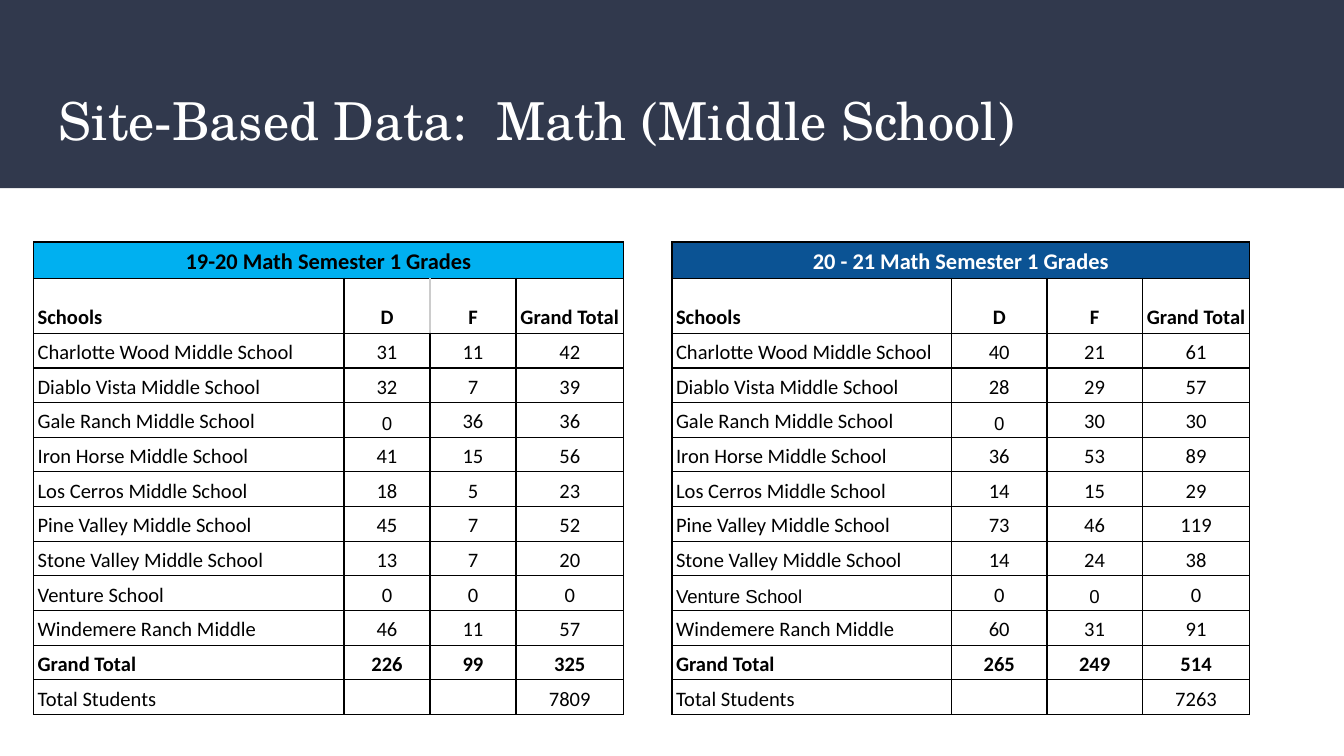
from lxml import etree
from pptx import Presentation
from pptx import util as u
from pptx.dml.color import RGBColor
from pptx.enum import shapes, text
from pptx.oxml import ns

SCHOOLS = [
    "Charlotte Wood Middle School", "Diablo Vista Middle School",
    "Gale Ranch Middle School", "Iron Horse Middle School",
    "Los Cerros Middle School", "Pine Valley Middle School",
    "Stone Valley Middle School", "Venture School", "Windemere Ranch Middle",
]
D_F_19 = [(31, 11), (32, 7), (0, 36), (41, 15), (18, 5), (45, 7), (13, 7), (0, 0), (46, 11)]
D_F_20 = [(40, 21), (28, 29), (0, 30), (36, 53), (14, 15), (73, 46), (14, 24), (0, 0), (60, 31)]
TABLE_HEIGHT, TITLE_ROW, HEADING_ROW, DATA_ROWS = 3.52, 0.27, 0.41, 11
DATA_ROW = (TABLE_HEIGHT - TITLE_ROW - HEADING_ROW) / DATA_ROWS
ROW_HEIGHTS = [TITLE_ROW, HEADING_ROW] + [DATA_ROW] * DATA_ROWS


def rgb(value):
    return RGBColor.from_string(value)


def grade_rows(title, grades, students):
    """Title, headings, one row per school, the totals and the enrolment."""
    d, f = (sum(column) for column in zip(*grades))
    rows = [[title, "", "", ""], ["Schools", "D", "F", "Grand Total"]]
    rows += [[name, a, b, a + b] for name, (a, b) in zip(SCHOOLS, grades)]
    return rows + [["Grand Total", d, f, d + f], ["Total Students", "", "", students]]


class Deck:
    TITLE_FONT, TABLE_FONT, ALT_FONT = "TeX Gyre Schola", "Calibri", "Arial"
    NAVY, BLACK, WHITE, GRAY = "31394D", "000000", "FFFFFF", "CCCCCC"

    def __init__(self, width, height):
        self.prs = Presentation()
        self.prs.slide_width = u.Inches(width)
        self.prs.slide_height = u.Inches(height)
        self.s = self.prs.slides.add_slide(self.prs.slide_layouts[6])

    def run(self, p, content, size, font, color, bold=False):
        r = p.add_run()
        r.text = str(content)
        r.font.size, r.font.name, r.font.bold = u.Pt(size), font, bold
        r.font.color.rgb = rgb(color)

    def band(self, x, y, w, h, color):
        sp = self.s.shapes.add_shape(
            shapes.MSO_SHAPE.RECTANGLE, *map(u.Inches, (x, y, w, h)))
        sp.shadow.inherit = False
        sp.fill.solid()
        sp.fill.fore_color.rgb = rgb(color)
        sp.line.fill.background()

    def title(self, x, y, w, h, content):
        tf = self.s.shapes.add_textbox(*map(u.Inches, (x, y, w, h))).text_frame
        tf.word_wrap = True
        tf.vertical_anchor = text.MSO_ANCHOR.MIDDLE
        tf.margin_left = tf.margin_right = u.Inches(0.1)
        tf.margin_top = tf.margin_bottom = u.Inches(0.1)
        self.run(tf.paragraphs[0], content, 28, self.TITLE_FONT, self.WHITE)

    def borders(self, cell, gray_side=None):
        tcPr = cell._tc.get_or_add_tcPr()
        for i, side in enumerate("LRTB"):
            ln = etree.Element(ns.qn("a:ln" + side), w=str(u.Pt(0.75)))
            fill = etree.SubElement(ln, ns.qn("a:solidFill"))
            color = self.GRAY if side == gray_side else self.BLACK
            etree.SubElement(fill, ns.qn("a:srgbClr"), val=color)
            tcPr.insert(i, ln)

    def cell(self, cell, content, size, font, color, bold, centered):
        cell.vertical_anchor = text.MSO_ANCHOR.BOTTOM
        cell.margin_left = cell.margin_right = u.Inches(0.03)
        cell.margin_top = cell.margin_bottom = u.Inches(0.02)
        cell.fill.background()
        p = cell.text_frame.paragraphs[0]
        p.line_spacing = 1.15
        if centered:
            p.alignment = text.PP_ALIGN.CENTER
        if content == "":
            # An empty cell still needs a small font to keep its row low
            etree.SubElement(p._p, ns.qn("a:endParaRPr"), sz=str(size * 100))
        else:
            self.run(p, content, size, font, color, bold)

    def table(self, x, y, widths, rows, fill, title_color, alt_cells, gray_sides=None):
        frame = self.s.shapes.add_table(
            len(rows), len(widths),
            *map(u.Inches, (x, y, sum(widths), TABLE_HEIGHT)))
        tbl = frame.table
        tbl.first_row = tbl.horz_banding = False
        for column, width in zip(tbl.columns, widths):
            column.width = u.Inches(width)
        for row, height in zip(tbl.rows, ROW_HEIGHTS):
            row.height = u.Inches(height)
        for i, row in enumerate(rows):
            for j, content in enumerate(row):
                size, font = (10, self.ALT_FONT) if (i, j) in alt_cells else (11, self.TABLE_FONT)
                self.cell(tbl.cell(i, j), content, 12 if i == 0 else size, font,
                          title_color if i == 0 else self.BLACK,
                          bold=i in (0, 1, len(rows) - 2), centered=i == 0 or j > 0)
                self.borders(tbl.cell(i, j), (gray_sides or {}).get((i, j)))
        # Title row across all columns
        head = tbl.cell(0, 0)
        head.merge(tbl.cell(0, len(widths) - 1))
        head.fill.solid()
        head.fill.fore_color.rgb = rgb(fill)


def main():
    deck = Deck(10, 10 * 9 / 16)

    # Title band
    deck.band(0, 0, 10, 1.4, deck.NAVY)
    deck.title(0.34, 0.55, 9.32, 0.68, "Site-Based Data:  Math (Middle School)")

    # Grades of both years
    deck.table(0.25, 1.8, [2.31, 0.64, 0.64, 0.8],
               grade_rows("19-20 Math Semester 1 Grades", D_F_19, 7809),
               "00B0F0", deck.BLACK, {(4, 1)}, {(1, 1): "R", (1, 2): "L"})
    deck.table(5, 1.8, [2.08, 0.71, 0.71, 0.8],
               grade_rows("20 - 21 Math Semester 1 Grades", D_F_20, 7263),
               "0B5394", deck.WHITE, {(4, 1), (9, 0), (9, 2)})

    deck.prs.save("out.pptx")


if __name__ == "__main__":
    main()
